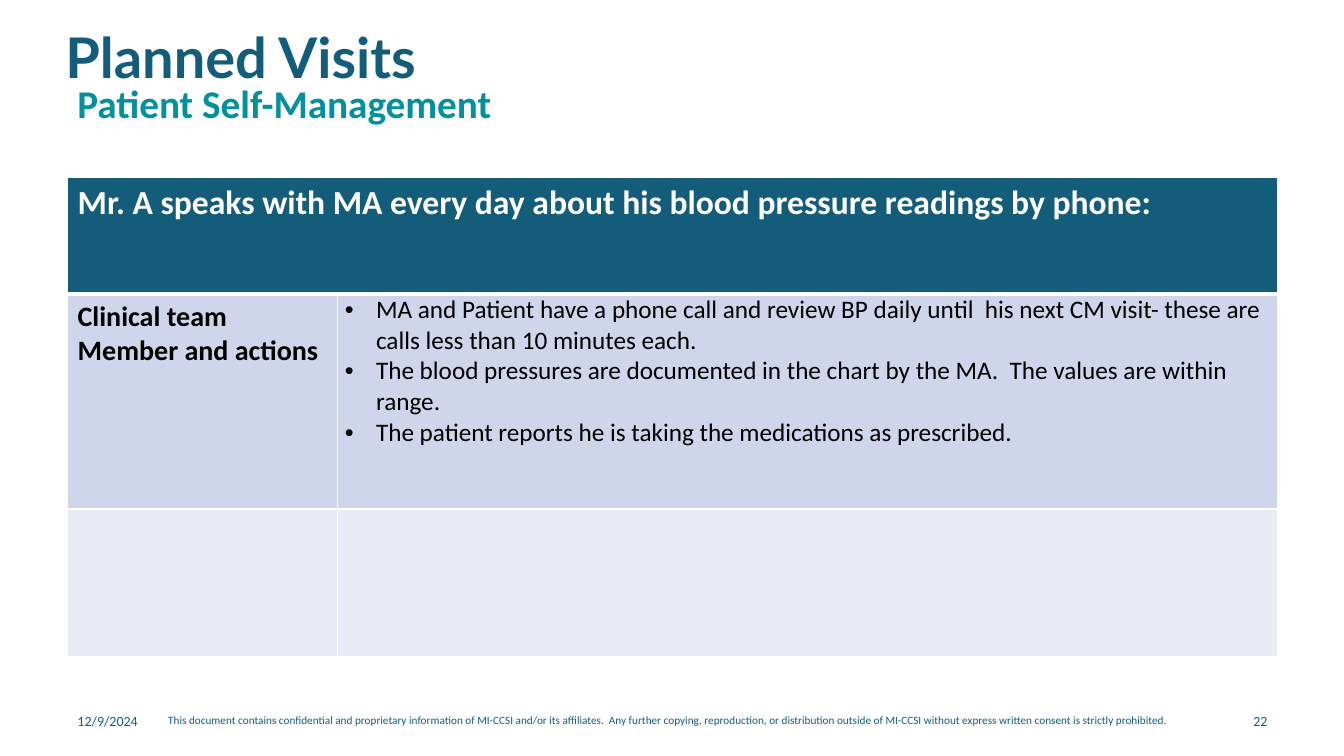
from dataclasses import dataclass

from lxml.etree import SubElement
from pptx import Presentation
from pptx.dml.color import RGBColor
from pptx.enum.text import MSO_ANCHOR, PP_ALIGN
from pptx.oxml.ns import qn
from pptx.util import Pt

SCALE = 9144  # EMU in one px, at 100 px to the inch
NAVY, TEAL, WHITE, BLACK = "135D7A", "00909E", "FFFFFF", "000000"
BAND_DARK, BAND_LIGHT = "CFD5EA", "E9EBF5"


@dataclass(frozen=True)
class Label:
    text: str
    left: int
    top: int
    width: int
    height: int
    size: int
    color: str = NAVY
    font: str = "Calibri"
    bold: bool = False
    anchor: MSO_ANCHOR = MSO_ANCHOR.TOP
    align: PP_ALIGN = PP_ALIGN.LEFT
    line_spacing: float = 1.0


@dataclass(frozen=True)
class TableCell:
    row: int
    column: int
    fill: str
    lines: tuple[str, ...] = ()
    size: int = 18
    color: str = BLACK
    bold: bool = False
    bulleted: bool = False


LABELS = [
    Label("Planned Visits", 55, 25, 1175, 62, 40, font="Lato", bold=True, line_spacing=0.9),
    Label("12/9/2024", 67, 695, 101, 40, 10, anchor=MSO_ANCHOR.MIDDLE),
    Label("22", 1166, 695, 101, 40, 10, anchor=MSO_ANCHOR.MIDDLE, align=PP_ALIGN.RIGHT),
    Label("This document contains confidential and proprietary information of MI-CCSI and/or its "
          "affiliates.  Any further copying, reproduction, or distribution outside of MI-CCSI "
          "without express written consent is strictly prohibited.", 157, 703, 1020, 32, 8),
    Label("Patient Self-Management", 67, 41, 1166, 90, 28, TEAL, bold=True,
          anchor=MSO_ANCHOR.BOTTOM, line_spacing=0.9),
]

COLUMN_WIDTHS = [268, 932]
ROW_HEIGHTS = [116, 213, 146]
CELLS = [
    TableCell(0, 0, NAVY,
              ("Mr. A speaks with MA every day about his blood pressure readings by phone:",),
              24, WHITE, True),
    TableCell(0, 1, NAVY),
    TableCell(1, 0, BAND_DARK, ("Clinical team Member and actions",), 20, bold=True),
    TableCell(1, 1, BAND_DARK, (
        "MA and Patient have a phone call and review BP daily until  his next CM visit- "
        "these are calls less than 10 minutes each.",
        "The blood pressures are documented in the chart by the MA.  The values are within range.",
        "The patient reports he is taking the medications as prescribed.",
    ), bulleted=True),
    TableCell(2, 0, BAND_LIGHT),
    TableCell(2, 1, BAND_LIGHT),
]


def px(length: int) -> int:
    return length * SCALE


def rgb(color: str) -> RGBColor:
    return RGBColor.from_string(color)


def write_span(para, text: str, size: int, color: str, bold: bool, font: str = "Calibri") -> None:
    span = para.add_run()
    span.text = text
    for name, value in {"name": font, "size": Pt(size), "bold": bold}.items():
        setattr(span.font, name, value)
    span.font.color.rgb = rgb(color)


def draw_label(page, label: Label) -> None:
    box = page.shapes.add_textbox(
        *map(px, (label.left, label.top, label.width, label.height)))
    frame = box.text_frame
    frame.word_wrap = True
    frame.vertical_anchor = label.anchor
    para = frame.paragraphs[0]
    para.alignment = label.align
    para.line_spacing = label.line_spacing
    write_span(para, label.text, label.size, label.color, label.bold, label.font)


def add_bullet(para) -> None:
    properties = para._p.get_or_add_pPr()
    properties.set("marL", str(px(31)))
    properties.set("indent", str(-px(31)))
    SubElement(properties, qn("a:buFont"), typeface="Arial")
    SubElement(properties, qn("a:buChar"), char="•")


def draw_borders(cell, row: int) -> None:
    properties = cell._tc.get_or_add_tcPr()
    widths = {"lnL": 1, "lnR": 1, "lnT": 3 if row == 1 else 1, "lnB": 3 if row == 0 else 1}
    for position, (side, width) in enumerate(widths.items()):
        line = SubElement(properties, qn(f"a:{side}"), w=str(Pt(width)))
        SubElement(SubElement(line, qn("a:solidFill")), qn("a:srgbClr"), val=WHITE)
        properties.insert(position, line)


def fill_cell(table, content: TableCell) -> None:
    cell = table.cell(content.row, content.column)
    cell.fill.solid()
    cell.fill.fore_color.rgb = rgb(content.fill)
    draw_borders(cell, content.row)
    if content.bulleted:
        margins = {"margin_left": 7, "margin_right": 7, "margin_top": 0, "margin_bottom": 0}
        for name, value in margins.items():
            setattr(cell, name, px(value))
    frame = cell.text_frame
    for index, line in enumerate(content.lines):
        para = frame.add_paragraph() if index else frame.paragraphs[0]
        if content.bulleted:
            add_bullet(para)
        write_span(para, line, content.size, content.color, content.bold)


def draw_visit_table(page) -> None:
    table = page.shapes.add_table(
        len(ROW_HEIGHTS), len(COLUMN_WIDTHS), px(67), px(176),
        px(sum(COLUMN_WIDTHS)), px(sum(ROW_HEIGHTS))).table
    table.horz_banding = False
    for column, width in zip(table.columns, COLUMN_WIDTHS):
        column.width = px(width)
    for row, height in zip(table.rows, ROW_HEIGHTS):
        row.height = px(height)
    # The heading spans both columns
    table.cell(0, 0).merge(table.cell(0, 1))
    for content in CELLS:
        fill_cell(table, content)


def main() -> None:
    deck = Presentation()
    deck.slide_width, deck.slide_height = px(1333), px(750)
    page = deck.slides.add_slide(deck.slide_layouts[6])
    # Headings and footer
    for label in LABELS:
        draw_label(page, label)
    # Visit details
    draw_visit_table(page)
    deck.save("out.pptx")


if __name__ == "__main__":
    main()
